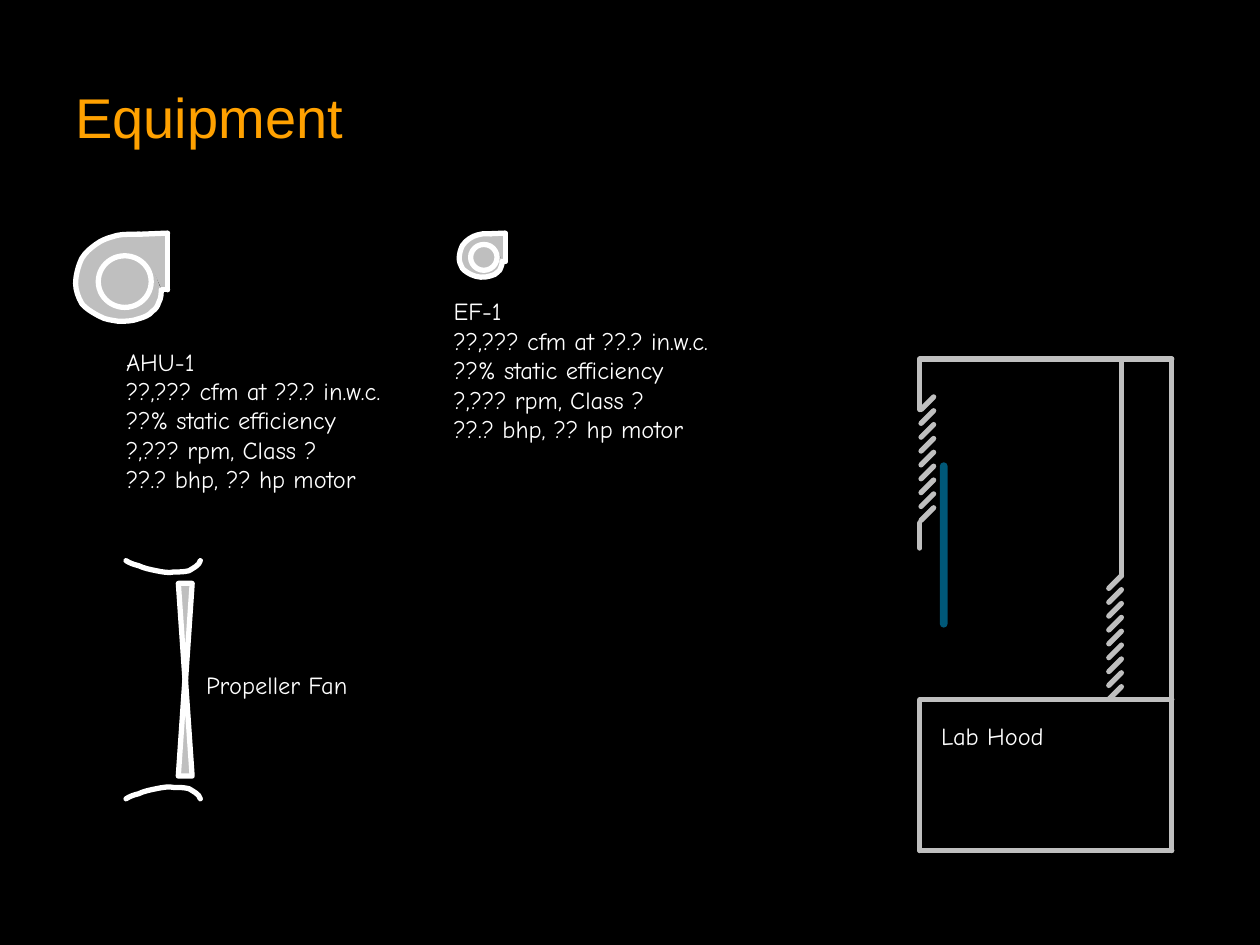
from dataclasses import dataclass

from lxml.etree import SubElement
from pptx import Presentation
from pptx.dml.color import RGBColor
from pptx.enum.shapes import MSO_CONNECTOR, MSO_SHAPE
from pptx.enum.text import MSO_ANCHOR, MSO_AUTO_SIZE
from pptx.oxml.ns import qn
from pptx.util import Inches, Pt


@dataclass(frozen=True)
class Theme:
    background: str = "000000"
    title: str = "FFA100"
    text: str = "FFFFFF"
    outline: str = "FFFFFF"
    metal: str = "BFBFBF"
    sash: str = "00B0F0"
    title_font: str = "Arial"
    body_font: str = "Comic Neue"
    title_size: float = 32
    body_size: float = 14
    stroke: float = 3
    sash_stroke: float = 4.5


THEME = Theme()
COLUMNS, ROWS = 100, 75  # grid of tenth-inch cells

RATINGS = ["??,??? cfm at ??.? in.w.c.", "??% static efficiency",
           "?,??? rpm, Class ?", "??.? bhp, ?? hp motor"]

# Curves: a start, then two handles and an end for each segment.
# Blower parts are in cells from the blower's top left corner.
VOLUTE = [(5.1, 0.1),
          (5, 0.1), (4.7, 0.1), (4.3, 0.1), (4, 0.1), (3.4, 0.1), (2.9, 0.3),
          (2.5, 0.4), (2, 0.6), (1.6, 0.9), (1.2, 1.2), (0.8, 1.5), (0.5, 2),
          (0.2, 2.6), (0, 3.4), (0, 4), (0, 4.5), (0.2, 5.1), (0.5, 5.6),
          (0.8, 6), (1.5, 6.4), (1.9, 6.6), (2.4, 6.9), (2.9, 6.9), (3.4, 7),
          (3.9, 7), (4.5, 7), (5, 6.8), (5.4, 6.7), (5.9, 6.5), (6.1, 6.2),
          (6.4, 6), (6.5, 5.8), (6.6, 5.5), (6.8, 5.2), (6.8, 4.7), (6.8, 4.5)]
OUTLET = [(5, 0), (5.9, 0.1), (6.4, 0), (7.4, 0.1), (7.4, 1.1), (7.4, 3.7),
          (7.4, 4.5), (7.1, 4.4), (7, 4.5), (6.8, 4.4), (6.5, 3.7), (5.1, 0.8),
          (5, 0)]
OUTLET_SIDE = ((7.3, 0.1), (7.3, 4.5))
OUTLET_ENDS = [((4.9, 0.1), (7.3, 0)), ((6.9, 4.5), (7.3, 4.5))]
COWL = [(15.9, 63.4), (15.8, 63), (15.3, 62.8), (15, 62.6),
        (14.6, 62.5), (14.3, 62.5), (13.8, 62.5),
        (13.4, 62.4), (12.9, 62.5), (12.4, 62.6),
        (11.9, 62.7), (11.4, 62.8), (11, 63),
        (10.6, 63.1), (10.3, 63.2), (10, 63.4)]


def cells(count):
    return Inches(count / 10)


def color(value):
    return RGBColor.from_string(value)


def style_line(line, value, width):
    """Solid line with round ends and corners."""
    line.color.rgb = color(value)
    line.width = Pt(width)
    outline = line.fill._xPr
    outline.set("cap", "rnd")
    SubElement(outline, qn("a:round"))


def style_shape(shape, fill=None, stroke=None):
    shape.shadow.inherit = False
    if fill:
        shape.fill.solid()
        shape.fill.fore_color.rgb = color(fill)
    else:
        shape.fill.background()
    if stroke:
        style_line(shape.line, stroke, THEME.stroke)
    else:
        shape.line.fill.background()


def add_text(shapes, lines, left, top, width, height, font=THEME.body_font,
             size=THEME.body_size, value=THEME.text, tight=True):
    box = shapes.add_textbox(*map(cells, (left, top, width, height)))
    frame = box.text_frame
    frame.word_wrap = True
    frame.vertical_anchor = MSO_ANCHOR.MIDDLE
    if tight:
        frame.auto_size = MSO_AUTO_SIZE.SHAPE_TO_FIT_TEXT
        frame.margin_left = frame.margin_right = 0
        frame.margin_top = frame.margin_bottom = 0
    for index, line in enumerate(lines):
        para = frame.add_paragraph() if index else frame.paragraphs[0]
        span = para.add_run()
        span.text = line
        span.font.name = font
        span.font.size = Pt(size)
        span.font.color.rgb = color(value)


def add_line(shapes, start, end, value=THEME.metal, width=THEME.stroke):
    line = shapes.add_connector(MSO_CONNECTOR.STRAIGHT,
                                *map(cells, (*start, *end)))
    style_line(line.line, value, width)
    SubElement(line._element.spPr, qn("a:effectLst"))
    return line


def add_preset(shapes, kind, left, top, width, height, rotation=0):
    shape = shapes.add_shape(kind, *map(cells, (left, top, width, height)))
    shape.rotation = rotation
    style_shape(shape, THEME.metal, THEME.outline)


def add_curve(shapes, points, fill=None, stroke=None, close=False):
    start, *rest = [(cells(x), cells(y)) for x, y in points]
    builder = shapes.build_freeform(*start)
    builder.add_line_segments(rest, close=close)
    shape = builder.convert_to_shape()
    # Turn every three straight steps into one cubic segment
    steps = list(shape._element.iter(qn("a:lnTo")))
    for first, second, third in zip(steps[::3], steps[1::3], steps[2::3]):
        outline = first.getparent()
        segment = SubElement(outline, qn("a:cubicBezTo"))
        outline.replace(first, segment)
        for step in (first, second, third):
            segment.append(step[0])
        outline.remove(second)
        outline.remove(third)
    style_shape(shape, fill, stroke)


def add_blower(page, name, left, top, scale, text_left, text_top):
    shapes = page.shapes.add_group_shape().shapes

    def place(points):
        return [(left + x * scale, top + y * scale) for x, y in points]

    add_curve(shapes, place(OUTLET), fill=THEME.metal, close=True)
    add_line(shapes, *place(OUTLET_SIDE), value=THEME.outline)
    add_curve(shapes, place(VOLUTE), THEME.metal, THEME.outline)
    add_preset(shapes, MSO_SHAPE.OVAL, left + 1.8 * scale, top + 1.8 * scale,
               4.2 * scale, 4.1 * scale)
    for edge in OUTLET_ENDS:
        add_line(shapes, *place(edge), value=THEME.outline)
    add_text(shapes, [name, *RATINGS], text_left, text_top, 23.2, 11.8)


def add_propeller_fan(page):
    shapes = page.shapes.add_group_shape().shapes
    # Two blades meeting at the hub
    for top, rotation in ((53.6, 0), (46.3, 180)):
        add_preset(shapes, MSO_SHAPE.ISOSCELES_TRIANGLE, 14.15, top, 1.1, 8, rotation)
    # Inlet cowl, mirrored about the hub
    hub = 53.95
    upper = [(x, 2 * hub - y) for x, y in COWL]
    for curve in (COWL, upper):
        add_curve(shapes, curve, stroke=THEME.outline)


def add_louver(shapes, right, top, slats=9, pitch=1.1):
    for index in range(slats):
        y = top + index * pitch
        add_line(shapes, (right, y), (right - 1, y + 1))


def add_lab_hood(page):
    shapes = page.shapes.add_group_shape().shapes
    left, right, top, counter, floor, baffle = 73, 93, 28.5, 55.5, 67.5, 89
    # Sliding sash, half transparent
    sash = add_line(shapes, (74.9, 49.5), (74.9, 37), THEME.sash, THEME.sash_stroke)
    tint = sash.line.fill._xPr.find(".//" + qn("a:srgbClr"))
    SubElement(tint, qn("a:alpha")).set("val", "50000")
    # Cabinet
    for x, start, end in ((left, 32.5, top), (right, floor, top)):
        add_line(shapes, (x, start), (x, end))
    for y in (top, floor, counter):
        add_line(shapes, (left, y), (right, y))
    add_line(shapes, (baffle, 45.7), (baffle, 28.7))
    # Air slots
    add_louver(shapes, baffle, 45.7)
    add_louver(shapes, left + 1.1, 31.5)
    for start, end in ((43.5, 41.5), (floor, 55.6)):
        add_line(shapes, (left, start), (left, end))


def main():
    deck = Presentation()
    deck.slide_width, deck.slide_height = cells(COLUMNS), cells(ROWS)
    page = deck.slides.add_slide(deck.slide_layouts[6])
    page.background.fill.solid()
    page.background.fill.fore_color.rgb = color(THEME.background)

    add_text(page.shapes, ["Equipment"], 5, 3, 90, 12.5, THEME.title_font,
             THEME.title_size, THEME.title, tight=False)
    add_text(page.shapes, ["Propeller Fan"], 16.35, 53.15, 15.8, 2.4)
    add_blower(page, "AHU-1", 6, 18.5, 1, 10, 27.45)
    add_propeller_fan(page)
    add_blower(page, "EF-1", 36.45, 18.5, 0.5, 36, 23.45)
    add_lab_hood(page)
    add_text(page.shapes, ["Lab Hood"], 74.7, 57.2, 15.8, 2.4)
    deck.save("out.pptx")


if __name__ == "__main__":
    main()
